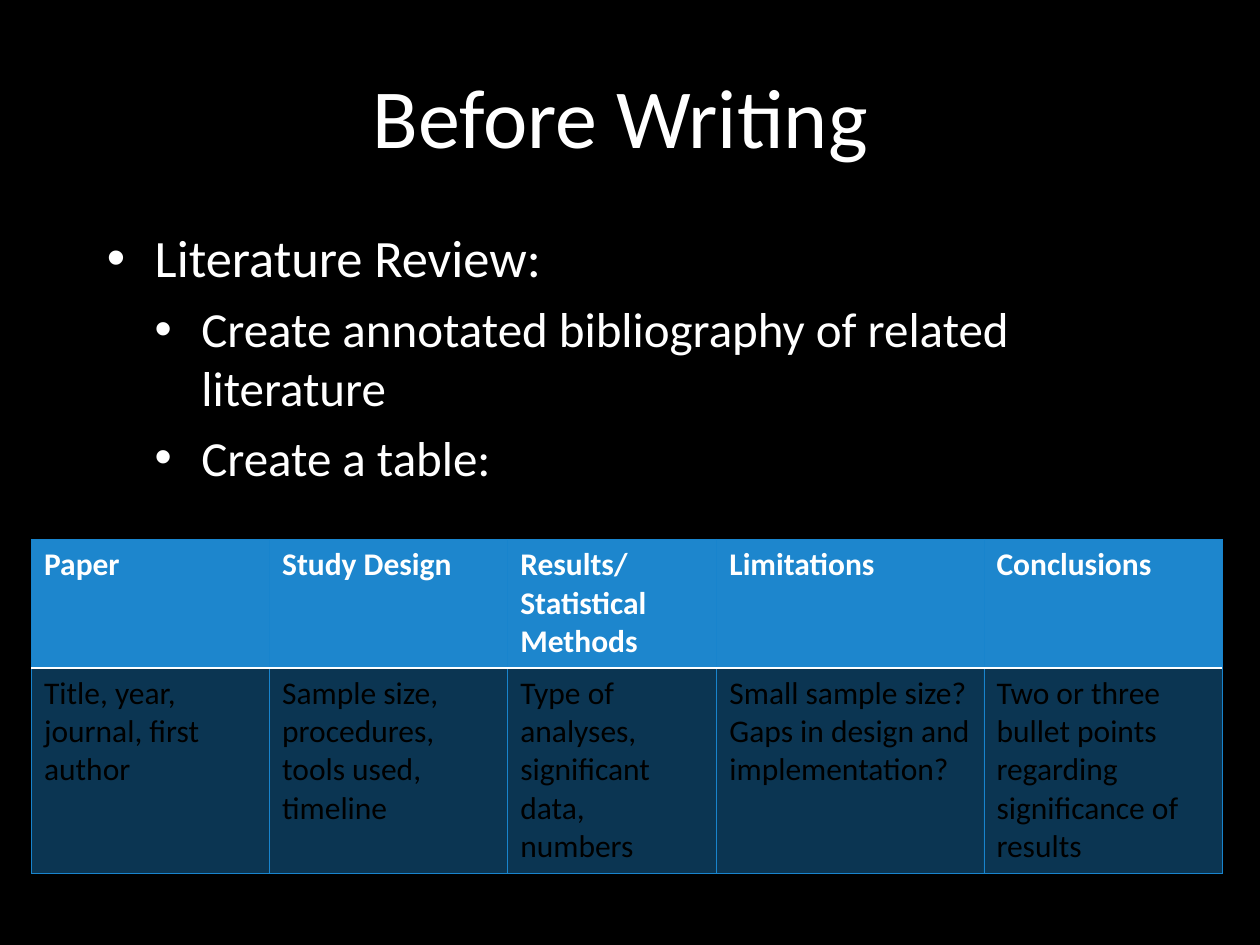
from dataclasses import dataclass

from lxml import etree
from pptx import Presentation
from pptx import util as u
from pptx.dml.color import RGBColor
from pptx.enum import text
from pptx.oxml import ns

FONT = "Calibri"
WHITE, BLACK = "FFFFFF", "000000"
BLUE, EDGE = "1D86CD", "1884CD"


@dataclass
class Point:
    words: str
    size: int
    left: float
    hang: float
    level: int = 0
    gap: int = 0


@dataclass
class Column:
    head: str
    body: str
    width: float


POINTS = [
    Point("Literature Review:", 30, 0.38, 0.38),
    Point("Create annotated bibliography of related literature", 28, 0.75, 0.37, 1, 6),
    Point("Create a table:", 28, 0.75, 0.37, 1, 6),
]

COLUMNS = [
    Column("Paper", "Title, year, journal, first author", 1.89),
    Column("Study Design", "Sample size, procedures, tools used, timeline", 1.89),
    Column("Results/Statistical Methods",
           "Type of analyses, significant data, numbers", 1.66),
    Column("Limitations",
           "Small sample size? Gaps in design and implementation?", 2.12),
    Column("Conclusions",
           "Two or three bullet points regarding significance of results", 1.89),
]


def color(code: str) -> RGBColor:
    return RGBColor.from_string(code)


def style(para, size: float, code: str, bold: bool = False) -> None:
    for run in para.runs:
        run.font.name = FONT
        run.font.size = u.Pt(size)
        run.font.bold = bold
        run.font.color.rgb = color(code)


def add_frame(slide, left: float, top: float, width: float, height: float):
    box = slide.shapes.add_textbox(
        u.Inches(left), u.Inches(top), u.Inches(width), u.Inches(height))
    box.text_frame.word_wrap = True
    return box.text_frame


def add_title(slide) -> None:
    frame = add_frame(slide, 0.75, 0.13, 8.5, 1.56)
    frame.vertical_anchor = text.MSO_ANCHOR.MIDDLE
    frame.text = "Before Writing "
    para = frame.paragraphs[0]
    para.alignment = text.PP_ALIGN.CENTER
    style(para, 48, WHITE)


def add_point(para, point: Point) -> None:
    para.text = point.words
    para.level = point.level
    props = para._p.get_or_add_pPr()
    props.set("marL", str(u.Inches(point.left)))
    props.set("indent", str(-u.Inches(point.hang)))
    para.space_before = u.Pt(point.gap)
    etree.SubElement(props, ns.qn("a:buFont"), typeface="Arial")
    etree.SubElement(props, ns.qn("a:buChar"), char="•")
    style(para, point.size, WHITE)


def add_list(slide) -> None:
    frame = add_frame(slide, 0.75, 1.74, 8.5, 4.66)
    for num, point in enumerate(POINTS):
        para = frame.add_paragraph() if num else frame.paragraphs[0]
        add_point(para, point)


def set_edge(cell, order: int, side: str, code: str, width: float) -> None:
    line = etree.Element(ns.qn(f"a:ln{side}"), w=str(u.Pt(width)))
    fill = etree.SubElement(line, ns.qn("a:solidFill"))
    etree.SubElement(fill, ns.qn("a:srgbClr"), val=code)
    cell._tc.get_or_add_tcPr().insert(order, line)


def fill_cell(cell, words: str, is_head: bool) -> None:
    cell.text = words
    style(cell.text_frame.paragraphs[0], 18, WHITE if is_head else BLACK, is_head)
    cell.fill.solid()
    cell.fill.fore_color.rgb = color(BLUE)
    if not is_head:
        tint = cell._tc.tcPr.find(".//" + ns.qn("a:srgbClr"))
        etree.SubElement(tint, ns.qn("a:alpha"), val="40000")
    shared = "B" if is_head else "T"
    for order, side in enumerate("LRTB"):
        look = (WHITE, 1.5) if side == shared else (EDGE, 0.5)
        set_edge(cell, order, side, *look)


def add_grid(slide) -> None:
    heights = [1.02, 1.63]
    width = sum(col.width for col in COLUMNS)
    table = slide.shapes.add_table(
        len(heights), len(COLUMNS), u.Inches(0.25), u.Inches(4.28),
        u.Inches(width), u.Inches(sum(heights))).table
    table.horz_banding = False
    for row, height in zip(table.rows, heights):
        row.height = u.Inches(height)
    for num, col in enumerate(COLUMNS):
        table.columns[num].width = u.Inches(col.width)
        fill_cell(table.cell(0, num), col.head, True)
        fill_cell(table.cell(1, num), col.body, False)


def main() -> None:
    deck = Presentation()
    deck.slide_width, deck.slide_height = u.Inches(10), u.Inches(7.5)
    slide = deck.slides.add_slide(deck.slide_layouts[6])
    slide.background.fill.solid()
    slide.background.fill.fore_color.rgb = color(BLACK)
    add_title(slide)
    add_list(slide)
    add_grid(slide)
    deck.save("out.pptx")


if __name__ == "__main__":
    main()
